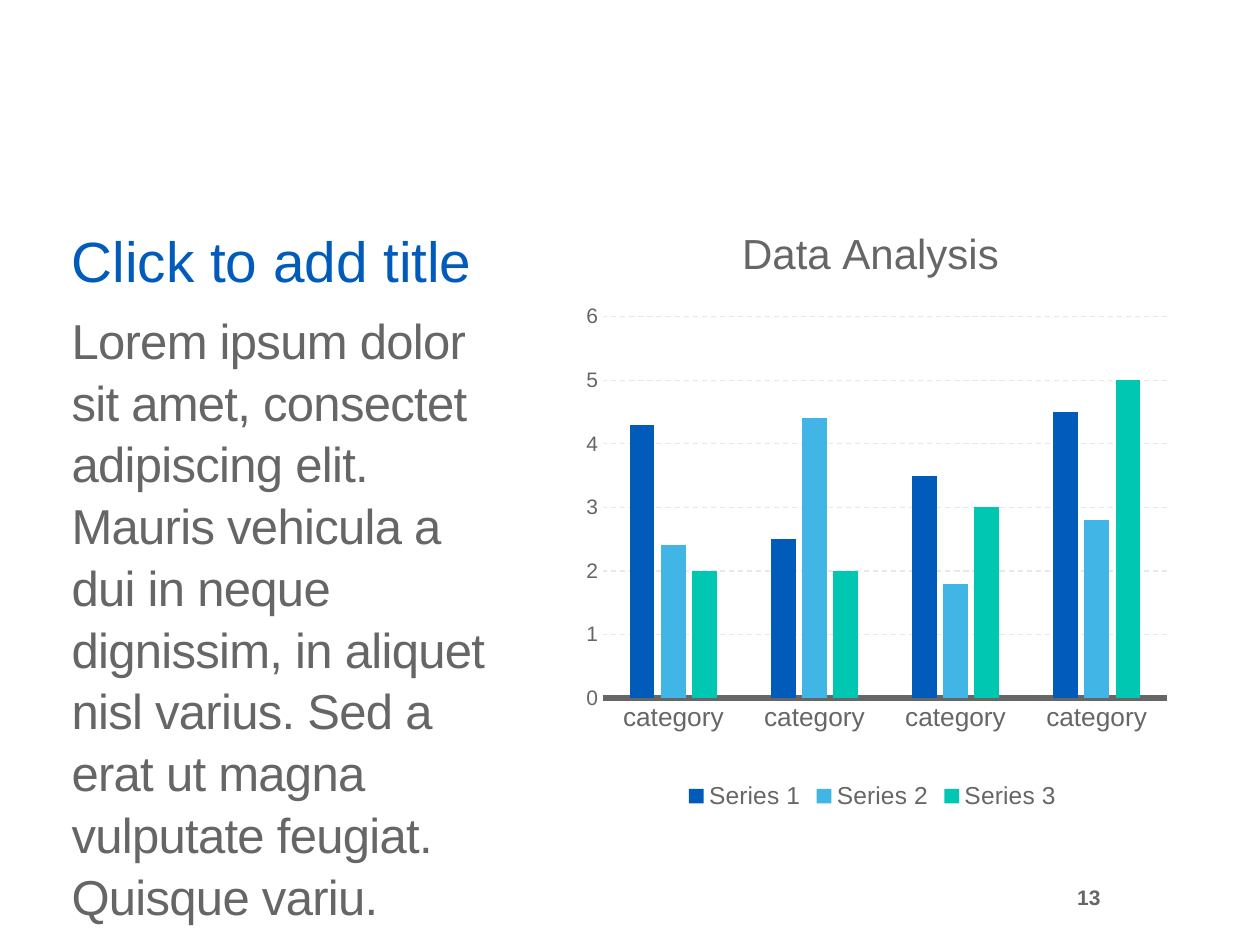
from pptx import Presentation, util as u
from pptx.chart import data as chart_data
from pptx.dml import color
from pptx.enum import chart as charts, dml, text
from pptx.oxml import parse_xml
from pptx.oxml.ns import nsdecls, qn

SCALE = 914400 / 126
FONT = "Arial"
GREY, BLUE, SKY, TEAL, PALE = "666666", "005BBB", "41B6E6", "00C7B1", "E8E8E8"
BODY = (
    "Lorem ipsum dolor sit amet, consectet adipiscing elit. Mauris vehicula a dui "
    "in neque dignissim, in aliquet nisl varius. Sed a erat ut magna vulputate "
    "feugiat. Quisque variu."
)
SERIES = {
    "Series 1": ((4.3, 2.5, 3.5, 4.5), BLUE),
    "Series 2": ((2.4, 4.4, 1.8, 2.8), SKY),
    "Series 3": ((2, 2, 3, 5), TEAL),
}


def px(value):
    """Turn pixels into EMU."""
    return u.Emu(round(value * SCALE))


def rgb(value):
    """Turn a hex string into a colour."""
    return color.RGBColor.from_string(value)


def assign(target, **values):
    """Set several attributes on one object."""
    for name, value in values.items():
        setattr(target, name, value)


def style_font(font, size, fill=GREY, bold=False):
    """Set the face, size, weight and colour of a font."""
    assign(font, name=FONT, size=u.Pt(size), bold=bold)
    font.color.rgb = rgb(fill)


def move(box, left, top, width, height):
    """Place a box by its pixel bounds."""
    assign(box, left=px(left), top=px(top), width=px(width), height=px(height))


def write(box, words, anchor, align, size, fill=GREY, bold=False, spacing=1.0):
    """Write one formatted paragraph into a box and return it."""
    frame = box.text_frame
    frame.text = words
    assign(frame, word_wrap=True, auto_size=text.MSO_AUTO_SIZE.NONE,
           vertical_anchor=anchor)
    para = frame.paragraphs[0]
    assign(para, alignment=align, line_spacing=spacing, space_before=u.Pt(0))
    style_font(para.runs[0].font, size, fill, bold)
    return para


def remove_bullet(para):
    """Drop the bullet and the hanging indent of a paragraph."""
    props = para._p.get_or_add_pPr()
    props.set("marL", "0")
    props.set("indent", "0")
    props.append(parse_xml(f"<a:buNone {nsdecls('a')}/>"))


def set_layout(element, target="", **fractions):
    """Give a chart part a manual position in fractions of the chart."""
    layout = element.find(qn("c:layout"))
    if layout is not None:
        element.remove(layout)
    tags = f'<c:layoutTarget val="{target}"/>' if target else ""
    tags += '<c:xMode val="edge"/><c:yMode val="edge"/>'
    tags += "".join(f'<c:{name} val="{value}"/>' for name, value in fractions.items())
    new = parse_xml(
        f"<c:layout {nsdecls('c')}><c:manualLayout>{tags}</c:manualLayout></c:layout>"
    )
    text_part = element.find(qn("c:tx"))
    element.insert(0 if text_part is None else 1, new)


def style_axes(chart):
    """Format both axes and the gridlines."""
    none = charts.XL_TICK_MARK.NONE
    for axis, size in ((chart.category_axis, 15), (chart.value_axis, 12)):
        assign(axis, major_tick_mark=none, minor_tick_mark=none)
        style_font(axis.tick_labels.font, size)
    base = chart.category_axis.format.line
    base.width = u.Pt(3.25)
    base.color.rgb = rgb(GREY)
    values = chart.value_axis
    assign(values, minimum_scale=0, maximum_scale=6, major_unit=1,
           has_major_gridlines=True)
    values.format.line.fill.background()
    grid = values.major_gridlines.format.line
    assign(grid, width=u.Pt(0.75), dash_style=dml.MSO_LINE.DASH)
    grid.color.rgb = rgb(PALE)


def add_column_chart(page, left, top, width, height):
    """Add the clustered column chart."""
    data = chart_data.CategoryChartData()
    data.categories = ["category"] * 4
    for name, (values, _) in SERIES.items():
        data.add_series(name, values)
    chart = page.shapes.add_chart(
        charts.XL_CHART_TYPE.COLUMN_CLUSTERED,
        px(left), px(top), px(width), px(height), data,
    ).chart
    style_font(chart.font, 10)
    assign(chart, has_title=True, has_legend=True)
    title = chart.chart_title
    title.text_frame.text = "Data Analysis"
    style_font(title.text_frame.paragraphs[0].runs[0].font, 24)
    set_layout(title._element, x=0.28, y=0.03)
    assign(chart.legend, position=charts.XL_LEGEND_POSITION.BOTTOM,
           include_in_layout=False)
    style_font(chart.legend.font, 14)
    plot = chart.plots[0]
    assign(plot, gap_width=219, overlap=-27, vary_by_categories=False)
    for series, (_, fill) in zip(plot.series, SERIES.values()):
        series.format.fill.solid()
        series.format.fill.fore_color.rgb = rgb(fill)
    style_axes(chart)
    area = chart._chartSpace.find(".//" + qn("c:plotArea"))
    set_layout(area, "inner", x=0.07, y=0.19, w=0.9, h=0.62)


def main():
    """Build and save the slide."""
    deck = Presentation()
    assign(deck, slide_width=px(1260), slide_height=px(945))
    page = deck.slides.add_slide(deck.slide_layouts[1])
    anchor, align = text.MSO_ANCHOR, text.PP_ALIGN

    title, body = page.shapes.title, page.placeholders[1]
    move(title, 59, 181, 469, 120)
    write(title, "Click to add title", anchor.BOTTOM, align.LEFT, 32.4, BLUE,
          spacing=0.9)
    move(body, 59, 301, 467, 600)
    para = write(body, BODY, anchor.TOP, align.LEFT, 28, spacing=1.05)
    remove_bullet(para)
    para.runs[0].font._element.set("spc", "-40")

    add_column_chart(page, 559, 200, 627, 615)
    number = page.shapes.add_textbox(px(1039), px(861), px(74), px(73))
    write(number, "13", anchor.MIDDLE, align.RIGHT, 12, bold=True)
    deck.save("out.pptx")


if __name__ == "__main__":
    main()
